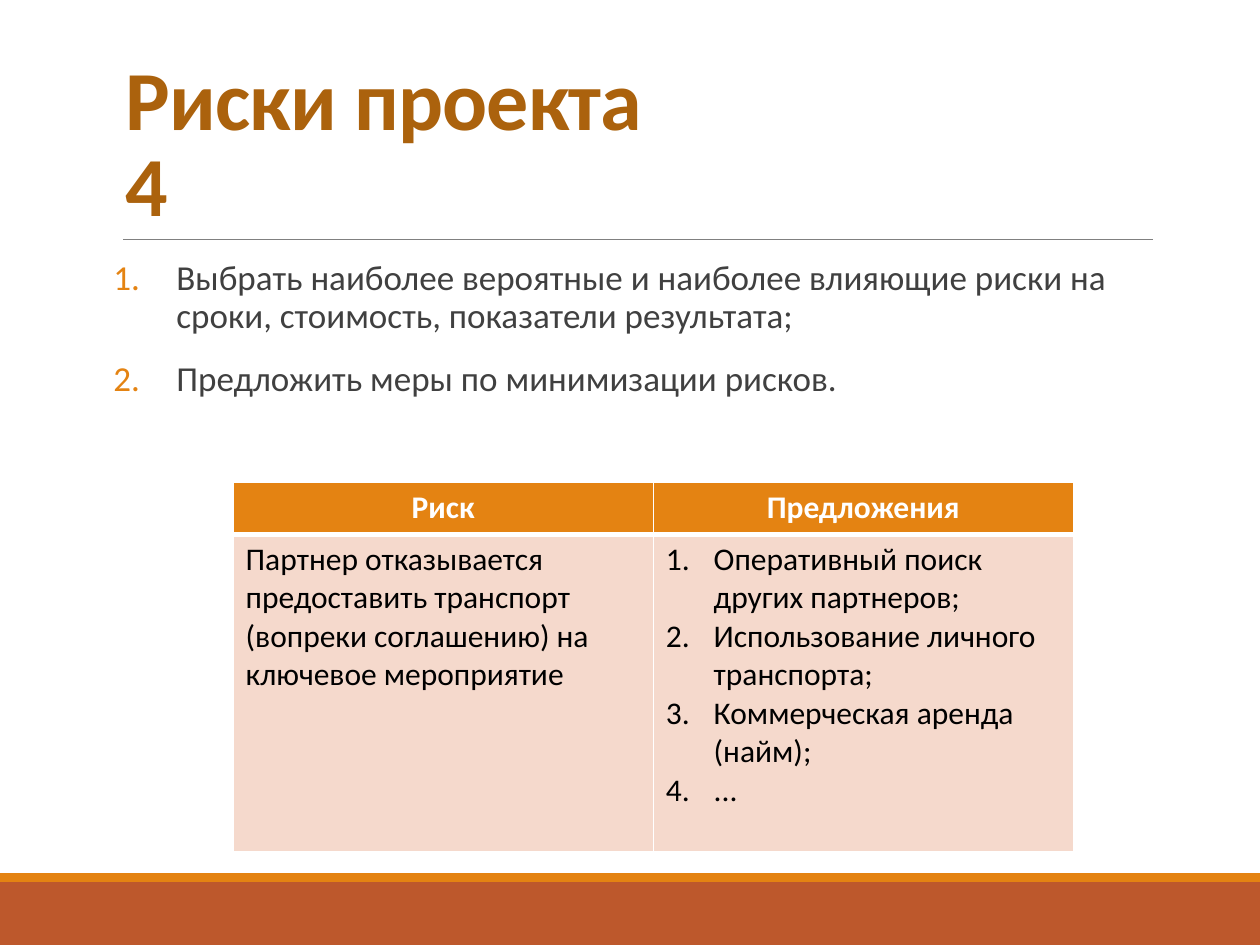
from lxml import etree
from pptx import Presentation
from pptx import util as u
from pptx.dml.color import RGBColor
from pptx.enum import shapes, text
from pptx.oxml import ns

ORANGE, RUST, BROWN = "E48312", "BD582C", "AB620D"
GREY, DARK, PALE, WHITE, BLACK = "808080", "404040", "F5D9CC", "FFFFFF", "000000"


def colour(hex_value):
    return RGBColor.from_string(hex_value)


def add_xml(parent, tag, **attributes):
    return etree.SubElement(parent, ns.qn(tag), attributes)


def assign(target, values):
    for name, value in values.items():
        setattr(target, name, value)


class Deck:
    """Style and current slide; places are shares of the slide's size."""

    font = "Calibri"

    def __init__(self, width, height):
        self.prs = Presentation()
        self.prs.slide_width, self.prs.slide_height = u.Inches(width), u.Inches(height)
        self.slide = self.prs.slides.add_slide(self.prs.slide_layouts[6])

    def box(self, x, y, w, h):
        width, height = self.prs.slide_width, self.prs.slide_height
        return [round(v) for v in (x * width, y * height, w * width, h * height)]

    def band(self, place, fill):
        band = self.slide.shapes.add_shape(shapes.MSO_SHAPE.RECTANGLE, *self.box(*place))
        band.shadow.inherit = False
        band.fill.solid()
        band.fill.fore_color.rgb = colour(fill)
        band.line.fill.background()

    def rule(self, x1, x2, y, line, width):
        left, top, right, _ = self.box(x1, y, x2, 0)
        rule = self.slide.shapes.add_connector(
            shapes.MSO_CONNECTOR.STRAIGHT, left, top, right, top)
        rule.line.color.rgb = colour(line)
        rule.line.width = u.Pt(width)
        add_xml(rule._element.spPr, "a:effectLst")

    def fill_text(self, frame, lines, size, ink, bold=False, layout=None,
                  numbered=0, number_ink=None, spacing=0):
        for i, line in enumerate(lines):
            paragraph = frame.add_paragraph() if i else frame.paragraphs[0]
            assign(paragraph, layout or {})
            paragraph.text = line
            for run in paragraph.runs:
                assign(run.font, {"name": self.font, "size": u.Pt(size), "bold": bold})
                run.font.color.rgb = colour(ink)
                if spacing:
                    run._r.get_or_add_rPr().set("spc", str(round(spacing * 100)))
            if numbered:
                self.number(paragraph, numbered, number_ink)

    def number(self, paragraph, indent, ink):
        props = paragraph._p.get_or_add_pPr()
        props.set("marL", str(u.Inches(indent)))
        props.set("indent", str(-u.Inches(indent)))
        if ink:
            add_xml(add_xml(props, "a:buClr"), "a:srgbClr", val=ink)
        add_xml(props, "a:buFont", typeface="+mj-lt")
        add_xml(props, "a:buAutoNum", type="arabicPeriod")

    def text(self, place, lines, frame_format, **style):
        frame = self.slide.shapes.add_textbox(*self.box(*place)).text_frame
        assign(frame, {"word_wrap": True, **frame_format})
        self.fill_text(frame, lines, **style)

    def table(self, place, row_heights, cells):
        grid = self.slide.shapes.add_table(
            len(cells), len(cells[0]), *self.box(*place)).table
        for row, height in zip(grid.rows, row_heights):
            row.height = self.box(0, 0, 0, height)[3]
        for r, row in enumerate(cells):
            for c, (lines, fill, style) in enumerate(row):
                cell = grid.cell(r, c)
                cell.fill.solid()
                cell.fill.fore_color.rgb = colour(fill)
                self.fill_text(cell.text_frame, lines, size=18, **style)
                self.borders(cell, top=3 if r == 1 else 1, bottom=3 if r == 0 else 1)

    def borders(self, cell, top, bottom):
        props = cell._tc.get_or_add_tcPr()
        sides = {"a:lnL": 1, "a:lnR": 1, "a:lnT": top, "a:lnB": bottom}
        for i, (side, width) in enumerate(sides.items()):
            line = add_xml(props, side, w=str(u.Pt(width)))
            add_xml(add_xml(line, "a:solidFill"), "a:srgbClr", val=WHITE)
            props.insert(i, line)


def main():
    deck = Deck(10, 7.5)
    foot = 7 / 7.5
    stripe = 0.07 / 7.5

    # Footer bands and the rule below the title
    deck.band((0, foot, 1, 1 - foot), RUST)
    deck.band((0, foot - stripe, 1, stripe), ORANGE)
    deck.rule(0.098, 0.915, 1.9 / 7.5, GREY, 0.5)

    # Title
    deck.text((0.09, 0.31 / 7.5, 0.825, 1.59 / 7.5), ["Риски проекта\v4"],
              {"vertical_anchor": text.MSO_ANCHOR.BOTTOM},
              size=48, ink=BROWN, bold=True, spacing=-0.5,
              layout={"line_spacing": 0.85})

    # Tasks
    deck.text((0.09, 2.02 / 7.5, 0.825, 1.6 / 7.5),
              ["Выбрать наиболее вероятные и наиболее влияющие риски на "
               "сроки, стоимость, показатели результата;",
               "Предложить меры по минимизации рисков."],
              {"margin_left": 0, "margin_right": 0},
              size=20, ink=DARK, numbered=0.5, number_ink=ORANGE,
              layout={"line_spacing": 0.9, "space_before": u.Pt(12),
                      "space_after": u.Pt(2)})

    # Risks and proposals
    head = {"ink": WHITE, "bold": True,
            "layout": {"alignment": text.PP_ALIGN.CENTER}}
    risk = ["Партнер отказывается предоставить транспорт "
            "(вопреки соглашению) на ключевое мероприятие"]
    proposals = ["Оперативный поиск других партнеров;",
                 "Использование личного транспорта;",
                 "Коммерческая аренда (найм);",
                 "..."]
    deck.table((0.185, 3.83 / 7.5, 0.667, 2.93 / 7.5), (0.41 / 7.5, 2.52 / 7.5), [
        [(["Риск"], ORANGE, head), (["Предложения"], ORANGE, head)],
        [(risk, PALE, {"ink": BLACK}),
         (proposals, PALE, {"ink": BLACK, "numbered": 0.38})],
    ])

    deck.prs.save("out.pptx")


if __name__ == "__main__":
    main()
